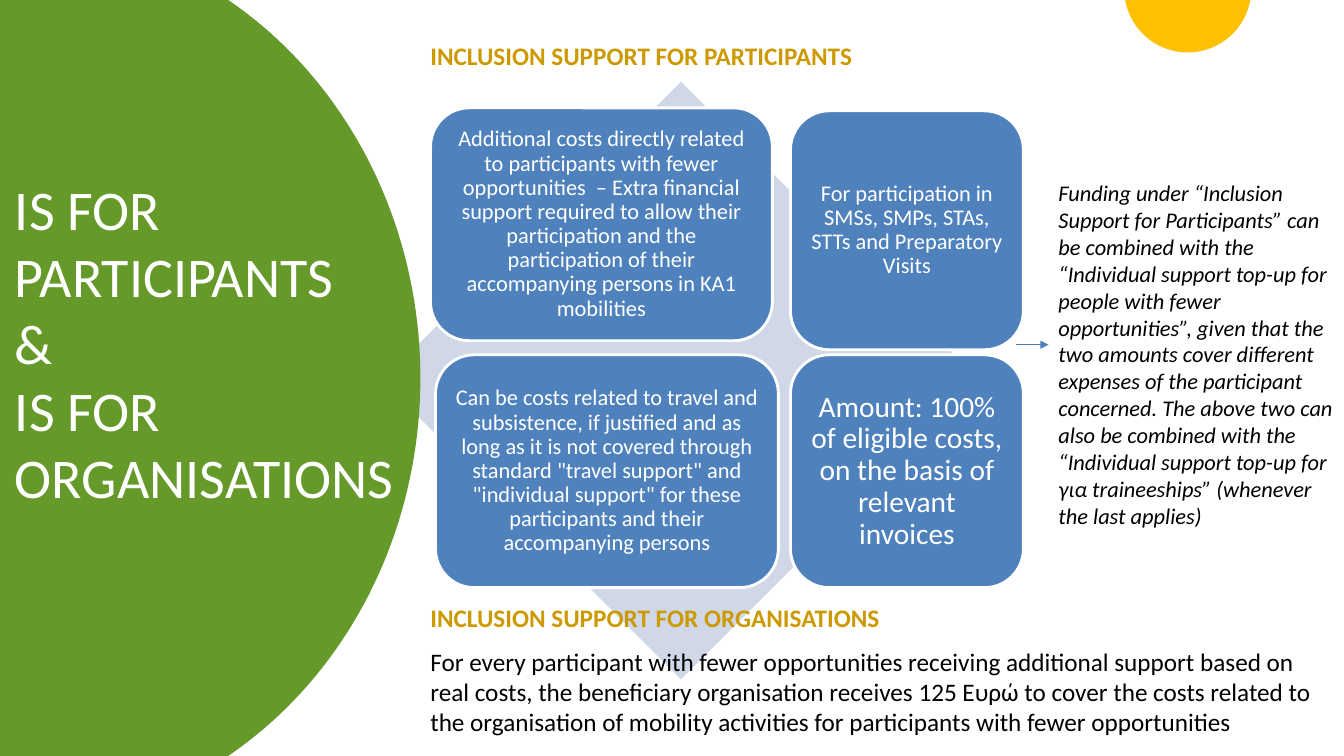
from math import asin, cos, pi, sin

from lxml.etree import SubElement
from pptx import Presentation
from pptx.dml.color import RGBColor
from pptx.enum.shapes import MSO_CONNECTOR, MSO_SHAPE
from pptx.enum.text import MSO_ANCHOR, MSO_AUTO_SIZE, PP_ALIGN
from pptx.oxml.ns import qn
from pptx.util import Inches, Pt

WHITE = RGBColor(0xFF, 0xFF, 0xFF)
BLACK = RGBColor(0, 0, 0)
GREEN = RGBColor(0x65, 0x9A, 0x2A)
AMBER = RGBColor(0xFF, 0xC0, 0x00)
GOLD = RGBColor(0xCC, 0x99, 0x00)
BLUE = RGBColor(0x4F, 0x81, 0xBD)
ARROW = RGBColor(0x4B, 0x7E, 0xBC)
PALE = RGBColor(0xD0, 0xD8, 0xE8)

CARDS = [
    ((4.27, 1.07, 3.39, 2.31), 16, 0.07,
     "Additional costs directly related to participants with fewer opportunities  – Extra "
     "financial support required to allow their participation and the participation of "
     "their accompanying persons in KA1 mobilities"),
    ((7.84, 1.1, 2.31, 2.37), 16, 0.07,
     "For participation in SMSs, SMPs, STAs, STTs and Preparatory Visits"),
    ((4.32, 3.52, 3.4, 2.31), 16, 0.07,
     "Can be costs related to travel and subsistence, if justified and as long as it is not "
     "covered through standard \"travel support\" and \"individual support\" for these "
     "participants and their accompanying persons"),
    ((7.84, 3.52, 2.31, 2.31), 21, 0.09,
     "Amount: 100% of eligible costs, on the basis of relevant invoices"),
]
FUNDING = (
    "Funding under “Inclusion Support for Participants” can be combined with the "
    "“Individual support top-up for people with fewer opportunities”, given that the two "
    "amounts cover different expenses of the participant concerned. The above two can also "
    "be combined with the “Individual support top-up for για traineeships” (whenever the "
    "last applies)")
GRANT = (
    "For every participant with fewer opportunities receiving additional support based on "
    "real costs, the beneficiary organisation receives 125 Ευρώ to cover the costs related "
    "to the organisation of mobility activities for participants with fewer opportunities")


class Deck:
    """Draws styled elements on the current slide."""

    font = "Calibri"

    def __init__(self, width, height):
        self.show = Presentation()
        self.show.slide_width = Inches(width)
        self.show.slide_height = Inches(height)
        self.slide = self.show.slides.add_slide(self.show.slide_layouts[6])
        self.shapes = self.slide.shapes

    def style(self, frame, size, color, bold=False, italic=False):
        for para in frame.paragraphs:
            for run in para.runs:
                font = run.font
                font.name, font.size = self.font, Pt(size)
                font.bold, font.italic = bold, italic
                font.color.rgb = color

    def paint(self, shape, color, edge=None):
        shape.shadow.inherit = False
        shape.fill.solid()
        shape.fill.fore_color.rgb = color
        if edge is None:
            shape.line.fill.background()
        else:
            shape.line.color.rgb = edge
            shape.line.width = Pt(2)

    def shape(self, kind, box, color, edge=None):
        item = self.shapes.add_shape(kind, *map(Inches, box))
        self.paint(item, color, edge)
        return item

    def card(self, box, size, inset, text):
        frame = self.shape(MSO_SHAPE.ROUNDED_RECTANGLE, box, BLUE, WHITE).text_frame
        frame.word_wrap = True
        frame.vertical_anchor = MSO_ANCHOR.MIDDLE
        frame.margin_left = frame.margin_right = Inches(inset)
        frame.margin_top = frame.margin_bottom = Inches(inset)
        frame.text = text
        para = frame.paragraphs[0]
        para.alignment = PP_ALIGN.CENTER
        para.line_spacing = 0.9
        self.style(frame, size, WHITE)

    def text(self, box, text, size, color, **look):
        frame = self.shapes.add_textbox(*map(Inches, box)).text_frame
        frame.word_wrap = True
        frame.auto_size = MSO_AUTO_SIZE.SHAPE_TO_FIT_TEXT
        frame.text = text
        self.style(frame, size, color, **look)

    def arc(self, center, radii, start, end, color, corners=(), steps=80):
        (mid_x, mid_y), (rad_x, rad_y) = center, radii
        turns = [start + (end - start) * step / steps for step in range(steps + 1)]
        points = [(mid_x + rad_x * cos(turn), mid_y + rad_y * sin(turn)) for turn in turns]
        points = [(Inches(x), Inches(y)) for x, y in [*points, *corners]]
        path = self.shapes.build_freeform(*points[0])
        path.add_line_segments(points[1:], close=True)
        self.paint(path.convert_to_shape(), color)

    def arrow(self, start, end):
        line = self.shapes.add_connector(
            MSO_CONNECTOR.STRAIGHT, *map(Inches, (*start, *end)))
        line.line.color.rgb = ARROW
        line.line.width = Pt(0.75)
        SubElement(line.line._get_or_add_ln(), qn("a:tailEnd"), type="triangle")
        SubElement(line._element.spPr, qn("a:effectLst"))


def main():
    deck = Deck(13.33, 7.5)
    tilt = asin(0.11 / 0.63)
    deck.arc((11.78, -0.11), (0.63, 0.63), tilt, pi - tilt, AMBER)
    deck.shape(MSO_SHAPE.DIAMOND, (3.79, 0.81, 5.93, 5.93), PALE)
    for card in CARDS:
        deck.card(*card)
    deck.text((10.4, 1.73, 2.96, 4.21), FUNDING, 16, BLACK, italic=True)
    sweep = asin(3.75 / 4.42)
    deck.arc((0.12, 3.75), (4.05, 4.42), -sweep, sweep, GREEN, [(0, 7.5), (0, 0)])
    deck.text((0.05, 1.68, 4.18, 3.47),
              "IS FOR PARTICIPANTS\n&\nIS FOR ORGANISATIONS", 40, WHITE)
    deck.text((4.17, 0.35, 5.25, 0.4),
              "INCLUSION SUPPORT FOR PARTICIPANTS", 18, GOLD, bold=True)
    deck.text((4.17, 6.36, 9, 1.01), GRANT, 18, BLACK)
    deck.text((4.17, 5.93, 6.75, 0.4),
              "INCLUSION SUPPORT FOR ORGANISATIONS", 18, GOLD, bold=True)
    deck.arrow((10.08, 3.42), (10.4, 3.42))
    deck.show.save("out.pptx")


if __name__ == "__main__":
    main()
